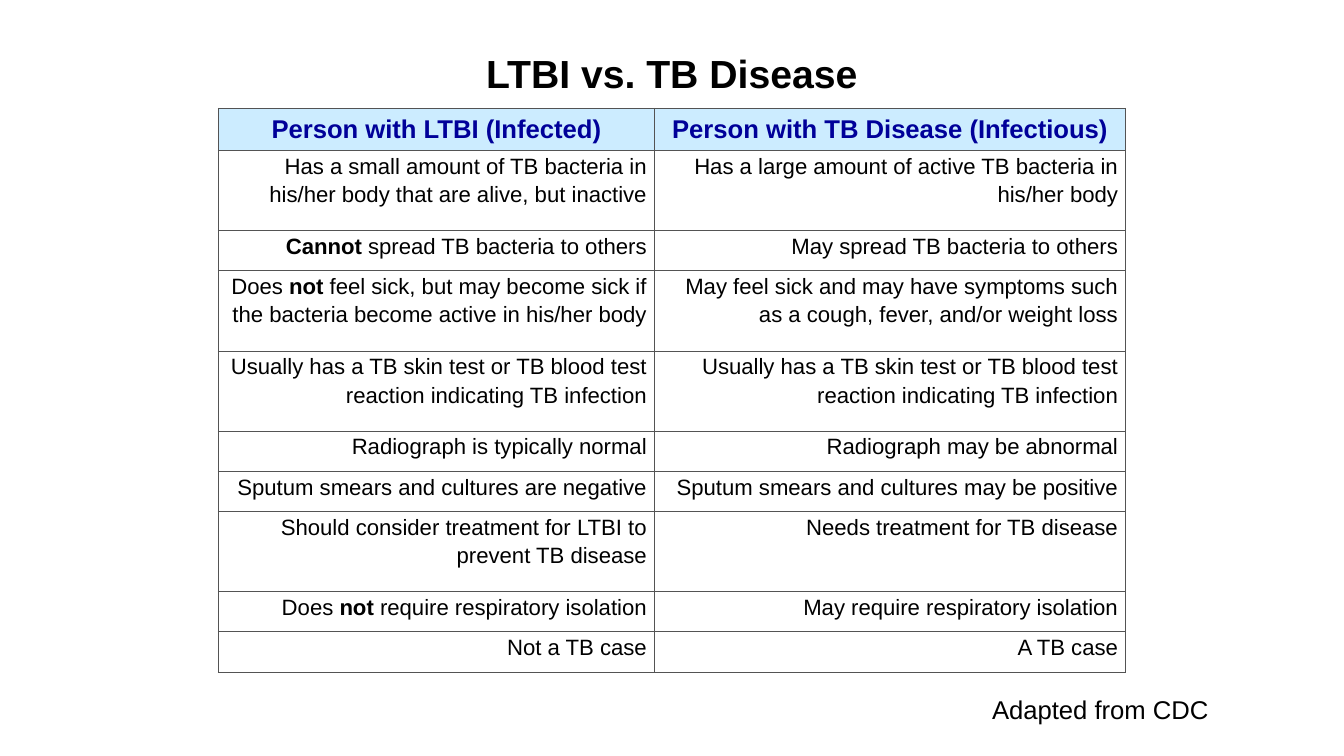
from dataclasses import dataclass

from lxml.etree import SubElement
from pptx import Presentation
from pptx.dml.color import RGBColor
from pptx.enum.text import MSO_ANCHOR as Anchor, PP_ALIGN as Align
from pptx.oxml.ns import qn
from pptx.slide import Slide
from pptx.table import _Cell as Cell
from pptx.text.text import TextFrame
from pptx.util import Pt


@dataclass(frozen=True)
class Theme:
    font: str = "Arial"
    ink: str = "000000"
    heading: str = "000099"
    heading_fill: str = "CCECFF"
    border: str = "535353"
    title_size: float = 33.6
    heading_size: float = 22
    body_size: float = 19
    source_size: float = 22


@dataclass(frozen=True)
class Run:
    text: str
    bold: bool = False


@dataclass(frozen=True)
class Style:
    size: float
    color: str
    align: Align
    anchor: Anchor
    spacing: float | Pt
    inset_x: float
    inset_y: float


@dataclass(frozen=True)
class Box:
    left: float
    top: float
    width: float
    height: float


@dataclass(frozen=True)
class Comparison:
    latent: tuple[Run, ...]
    disease: tuple[Run, ...]
    lines: int = 1


THEME = Theme()
TITLE = Style(THEME.title_size, THEME.ink, Align.CENTER, Anchor.BOTTOM, Pt(36), 3.6, 3.6)
HEADING = Style(THEME.heading_size, THEME.heading, Align.CENTER, Anchor.MIDDLE, 1.0, 6.5, 0)
BODY = Style(THEME.body_size, THEME.ink, Align.RIGHT, Anchor.TOP, 1.15, 6.5, 0)
SOURCE = Style(THEME.source_size, THEME.ink, Align.LEFT, Anchor.TOP, 1.0, 3.6, 3.6)

TABLE_LEFT, TABLE_TOP = 187.2, 92.9
COLUMN_WIDTHS = (373.7, 403.9)
HEADING_HEIGHT, LINE_HEIGHT = 36, 34.4

SKIN_TEST = (Run("Usually has a TB skin test or TB blood test reaction indicating TB infection"),)
HEADINGS = (
    (Run("Person with LTBI (Infected)", True),),
    (Run("Person with TB Disease (Infectious)", True),),
)
COMPARISONS = (
    Comparison(
        (Run("Has a small amount of TB bacteria in his/her body that are alive, but inactive"),),
        (Run("Has a large amount of active TB bacteria in his/her body"),),
        2,
    ),
    Comparison(
        (Run("Cannot", True), Run(" spread TB bacteria to others")),
        (Run("May spread TB bacteria to others"),),
    ),
    Comparison(
        (
            Run("Does "),
            Run("not", True),
            Run(" feel sick, but may become sick if the bacteria become active in his/her body"),
        ),
        (Run("May feel sick and may have symptoms such as a cough, fever, and/or weight loss"),),
        2,
    ),
    Comparison(SKIN_TEST, SKIN_TEST, 2),
    Comparison(
        (Run("Radiograph is typically normal"),),
        (Run("Radiograph may be abnormal"),),
    ),
    Comparison(
        (Run("Sputum smears and cultures are negative"),),
        (Run("Sputum smears and cultures may be positive"),),
    ),
    Comparison(
        (Run("Should consider treatment for LTBI to prevent TB disease"),),
        (Run("Needs treatment for TB disease"),),
        2,
    ),
    Comparison(
        (Run("Does "), Run("not", True), Run(" require respiratory isolation")),
        (Run("May require respiratory isolation"),),
    ),
    Comparison((Run("Not a TB case"),), (Run("A TB case"),)),
)


def write(frame: TextFrame, runs: tuple[Run, ...], style: Style) -> None:
    paragraph = frame.paragraphs[0]
    paragraph.alignment = style.align
    paragraph.line_spacing = style.spacing
    for part in runs:
        run = paragraph.add_run()
        run.text = part.text
        run.font.name = THEME.font
        run.font.size = Pt(style.size)
        run.font.bold = part.bold
        run.font.color.rgb = RGBColor.from_string(style.color)


def add_text(slide: Slide, box: Box, runs: tuple[Run, ...], style: Style) -> None:
    area = slide.shapes.add_textbox(Pt(box.left), Pt(box.top), Pt(box.width), Pt(box.height))
    frame = area.text_frame
    frame.word_wrap = True
    frame.vertical_anchor = style.anchor
    frame.margin_left = frame.margin_right = Pt(style.inset_x)
    frame.margin_top = frame.margin_bottom = Pt(style.inset_y)
    write(frame, runs, style)


def outline(cell: Cell) -> None:
    properties = cell._tc.get_or_add_tcPr()
    for side in ("lnL", "lnR", "lnT", "lnB"):
        line = SubElement(properties, qn(f"a:{side}"), w=str(Pt(1)))
        fill = SubElement(line, qn("a:solidFill"))
        SubElement(fill, qn("a:srgbClr"), val=THEME.border)


def fill_cell(cell: Cell, runs: tuple[Run, ...], style: Style) -> None:
    cell.margin_left = cell.margin_right = Pt(style.inset_x)
    cell.margin_top = cell.margin_bottom = Pt(style.inset_y)
    cell.vertical_anchor = style.anchor
    outline(cell)
    if style is HEADING:
        cell.fill.solid()
        cell.fill.fore_color.rgb = RGBColor.from_string(THEME.heading_fill)
    else:
        cell.fill.background()
    write(cell.text_frame, runs, style)


def add_comparison_table(slide: Slide) -> None:
    heights = [HEADING_HEIGHT, *(LINE_HEIGHT * item.lines for item in COMPARISONS)]
    table = slide.shapes.add_table(
        len(heights), len(COLUMN_WIDTHS), Pt(TABLE_LEFT), Pt(TABLE_TOP),
        Pt(sum(COLUMN_WIDTHS)), Pt(sum(heights)),
    ).table
    table.first_row = table.horz_banding = False
    for column, width in zip(table.columns, COLUMN_WIDTHS):
        column.width = Pt(width)
    contents = [HEADINGS, *((item.latent, item.disease) for item in COMPARISONS)]
    for index, (row, height, content) in enumerate(zip(table.rows, heights, contents)):
        row.height = Pt(height)
        for cell, runs in zip(row.cells, content):
            fill_cell(cell, runs, BODY if index else HEADING)


def main() -> None:
    deck = Presentation()
    deck.slide_width, deck.slide_height = Pt(1152), Pt(648)
    slide = deck.slides.add_slide(deck.slide_layouts[6])
    title_box = Box(TABLE_LEFT, 25.9, sum(COLUMN_WIDTHS), 60.5)
    add_text(slide, title_box, (Run("LTBI vs. TB Disease", True),), TITLE)
    add_comparison_table(slide)
    add_text(slide, Box(846.7, 591.1, 210.2, 33.8), (Run("Adapted from CDC"),), SOURCE)
    deck.save("out.pptx")


if __name__ == "__main__":
    main()
